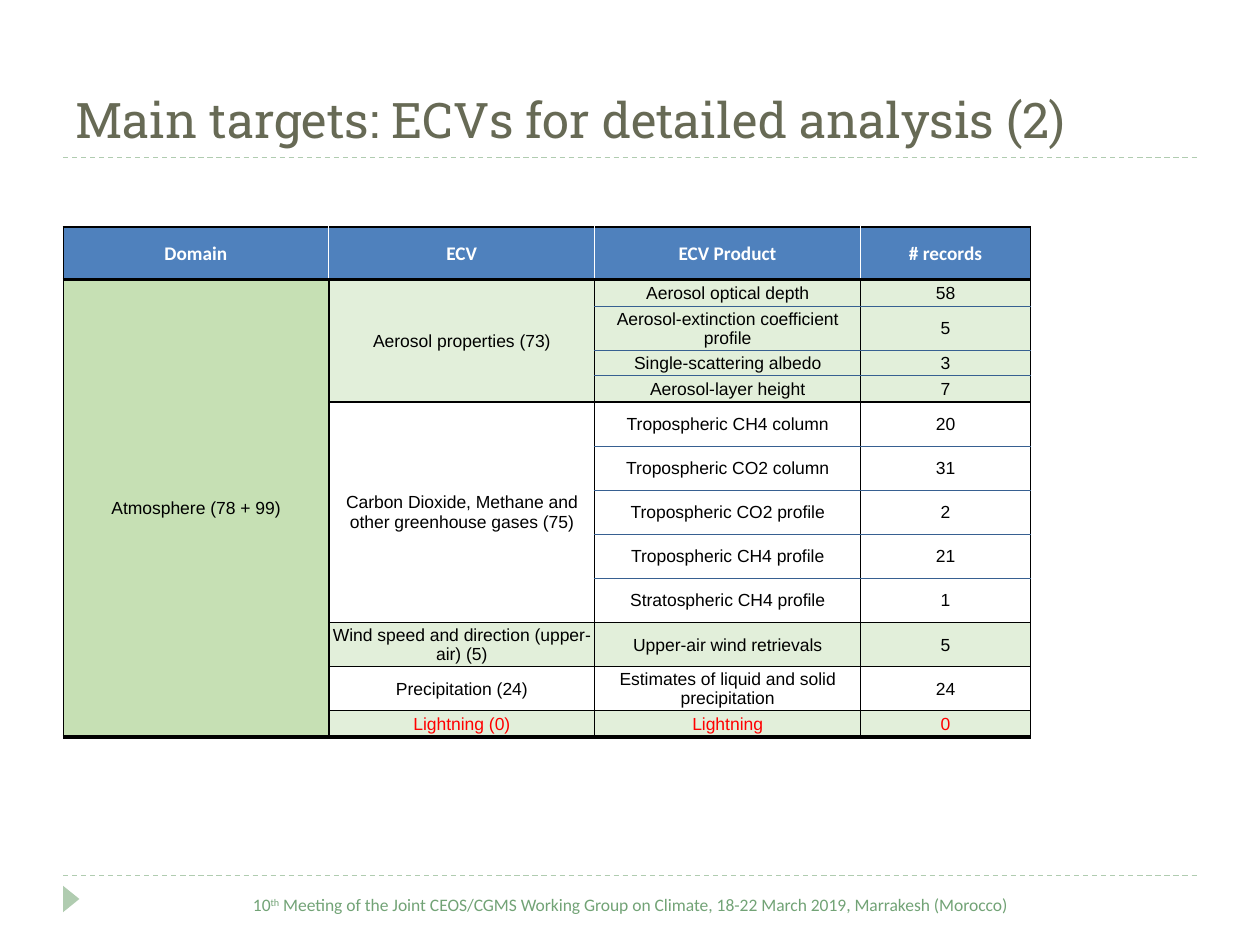
from lxml import etree
from pptx import Presentation
from pptx.dml.color import RGBColor
from pptx.enum.dml import MSO_LINE
from pptx.enum.shapes import MSO_CONNECTOR, MSO_SHAPE
from pptx.enum.text import MSO_ANCHOR, PP_ALIGN
from pptx.oxml.ns import qn
from pptx.util import Inches, Pt

DASH = MSO_LINE.DASH
STRAIGHT = MSO_CONNECTOR.STRAIGHT
TRIANGLE = MSO_SHAPE.ISOSCELES_TRIANGLE
MIDDLE, BOTTOM = MSO_ANCHOR.MIDDLE, MSO_ANCHOR.BOTTOM
LEFT, CENTER = PP_ALIGN.LEFT, PP_ALIGN.CENTER

SAGE, FOOTER_GREEN, TITLE_OLIVE = "B0CCB0", "72A376", "676A55"
HEADER_BLUE, DOMAIN_GREEN, BAND_GREEN = "4F81BD", "C6E0B4", "E2EFDA"
BLACK, WHITE, RED = "000000", "FFFFFF", "FF0000"

HAIRLINE = ("376091", 0.5)
WHITE_LINE = (WHITE, 0.5)
THIN = (BLACK, 0.5)
MEDIUM = (BLACK, 1)
THICK = (BLACK, 2)

COLUMN_WIDTHS = [2.11, 2.11, 2.11, 1.35]
ROW_HEIGHTS = [0.42, 0.21, 0.35, 0.2, 0.21] + [0.35] * 7 + [0.21]
HEADERS = ["Domain", "ECV", "ECV Product", "# records"]
DOMAIN = "Atmosphere (78 + 99)"
ECV_GROUPS = [
    ("Aerosol properties (73)", BAND_GREEN, BLACK, [
        ("Aerosol optical depth", 58),
        ("Aerosol-extinction coefficient profile", 5),
        ("Single-scattering albedo", 3),
        ("Aerosol-layer height", 7)]),
    ("Carbon Dioxide, Methane and other greenhouse gases (75)", None, BLACK, [
        ("Tropospheric CH4 column", 20),
        ("Tropospheric CO2 column", 31),
        ("Tropospheric CO2 profile", 2),
        ("Tropospheric CH4 profile", 21),
        ("Stratospheric CH4 profile", 1)]),
    ("Wind speed and direction (upper-air) (5)", BAND_GREEN, BLACK, [
        ("Upper-air wind retrievals", 5)]),
    ("Precipitation (24)", None, BLACK, [
        ("Estimates of liquid and solid precipitation", 24)]),
    ("Lightning (0)", BAND_GREEN, RED, [("Lightning", 0)]),
]


def rgb(color):
    return RGBColor.from_string(color)


def add_run(paragraph, text, font_name, size, color, bold=False):
    run = paragraph.add_run()
    run.text = text
    run.font.name = font_name
    run.font.size = Pt(size)
    run.font.bold = bold
    run.font.color.rgb = rgb(color)
    return run


def set_borders(cell, left, right, top, bottom):
    properties = cell._tc.get_or_add_tcPr()
    sides = zip(("a:lnL", "a:lnR", "a:lnT", "a:lnB"), (left, right, top, bottom))
    for tag, (color, width) in sides:
        line = etree.SubElement(properties, qn(tag), w=str(Pt(width)))
        fill = etree.SubElement(line, qn("a:solidFill"))
        etree.SubElement(fill, qn("a:srgbClr"), val=color)


def style_cell(cell, fill, borders):
    set_borders(cell, *borders)
    if fill:
        cell.fill.solid()
        cell.fill.fore_color.rgb = rgb(fill)
    else:
        cell.fill.background()
    cell.vertical_anchor = MIDDLE
    cell.margin_left = cell.margin_right = cell.margin_top = Inches(0.01)
    cell.margin_bottom = 0


def write_cell(cell, text, font_name="Arial", size=10, color=BLACK, bold=False):
    paragraph = cell.text_frame.paragraphs[0]
    paragraph.alignment = CENTER
    add_run(paragraph, text, font_name, size, color, bold)


def fill_header(table):
    last = len(HEADERS) - 1
    for column, text in enumerate(HEADERS):
        cell = table.cell(0, column)
        left = THIN if column == 0 else WHITE_LINE
        right = MEDIUM if column == last else WHITE_LINE
        style_cell(cell, HEADER_BLUE, (left, right, MEDIUM, THICK))
        write_cell(cell, text, "Calibri", 11, WHITE, True)


def fill_domain(table, last_row):
    """Merge the first column below the header into one domain cell."""
    for row in range(1, last_row + 1):
        style_cell(table.cell(row, 0), DOMAIN_GREEN, (THIN, MEDIUM, THICK, THICK))
    table.cell(1, 0).merge(table.cell(last_row, 0))
    write_cell(table.cell(1, 0), DOMAIN)


def fill_group(table, first, last_row, group):
    """Write one ECV with its products and return the next free row."""
    name, fill, color, products = group
    last = first + len(products) - 1
    group_top = THICK if first == 1 else MEDIUM
    group_bottom = THICK if last == last_row else MEDIUM
    for row, (product, records) in enumerate(products, first):
        top = group_top if row == first else HAIRLINE
        bottom = group_bottom if row == last else HAIRLINE
        style_cell(table.cell(row, 1), fill, (MEDIUM, MEDIUM, group_top, group_bottom))
        for column, text in ((2, product), (3, str(records))):
            cell = table.cell(row, column)
            style_cell(cell, fill, (MEDIUM, MEDIUM, top, bottom))
            write_cell(cell, text, color=color)
    if last > first:
        table.cell(first, 1).merge(table.cell(last, 1))
    write_cell(table.cell(first, 1), name, color=color)
    return last + 1


def add_ecv_table(slide, left, top):
    frame = slide.shapes.add_table(
        len(ROW_HEIGHTS), len(COLUMN_WIDTHS), Inches(left), Inches(top),
        Inches(sum(COLUMN_WIDTHS)), Inches(sum(ROW_HEIGHTS)))
    table = frame.table
    table.first_row = table.horz_banding = False
    for column, width in zip(table.columns, COLUMN_WIDTHS):
        column.width = Inches(width)
    for row, height in zip(table.rows, ROW_HEIGHTS):
        row.height = Inches(height)
    last_row = len(ROW_HEIGHTS) - 1
    fill_header(table)
    fill_domain(table, last_row)
    row = 1
    for group in ECV_GROUPS:
        row = fill_group(table, row, last_row, group)


def add_dashed_rule(slide, left, top, width):
    rule = slide.shapes.add_connector(
        STRAIGHT, Inches(left), Inches(top), Inches(left + width), Inches(top))
    rule.line.color.rgb = rgb(SAGE)
    rule.line.width = Pt(0.75)
    rule.line.dash_style = DASH
    etree.SubElement(rule._element.spPr, qn("a:effectLst"))


def add_title(slide, left, top, width, height):
    title = slide.shapes.title
    title.left, title.top = Inches(left), Inches(top)
    title.width, title.height = Inches(width), Inches(height)
    title.text_frame.vertical_anchor = BOTTOM
    paragraph = title.text_frame.paragraphs[0]
    paragraph.alignment = LEFT
    add_run(paragraph, "Main targets: ECVs for detailed analysis (2)",
            "Roboto Slab", 28, TITLE_OLIVE)
    add_dashed_rule(slide, left, top + height + 0.02, width)


def add_footer(slide, left, top, width):
    add_dashed_rule(slide, left, top, width)
    marker = slide.shapes.add_shape(
        TRIANGLE, Inches(left - 0.04), Inches(top + 0.12), Inches(0.21), Inches(0.13))
    marker.rotation = 90
    marker.shadow.inherit = False
    marker.fill.solid()
    marker.fill.fore_color.rgb = rgb(SAGE)
    marker.line.fill.background()

    box = slide.shapes.add_textbox(
        Inches(left + 0.09), Inches(top + 0.1), Inches(width - 0.18), Inches(0.4))
    box.text_frame.word_wrap = True
    paragraph = box.text_frame.paragraphs[0]
    paragraph.alignment = CENTER
    add_run(paragraph, "10", "Calibri", 10, FOOTER_GREEN)
    ordinal = add_run(paragraph, "th", "Calibri", 10, FOOTER_GREEN)
    ordinal.font._element.set("baseline", "30000")
    add_run(paragraph, " Meeting of the Joint CEOS/CGMS Working Group on Climate, "
            "18-22 March 2019, Marrakesh (Morocco)", "Calibri", 10, FOOTER_GREEN)


def main():
    presentation = Presentation()
    presentation.slide_width, presentation.slide_height = Inches(10), Inches(7.5)
    slide = presentation.slides.add_slide(presentation.slide_layouts[5])
    add_title(slide, 0.5, 0.15, 9, 1.08)
    add_ecv_table(slide, 0.5, 1.8)
    add_footer(slide, 0.5, 6.95, 9)
    presentation.save("out.pptx")


if __name__ == "__main__":
    main()
